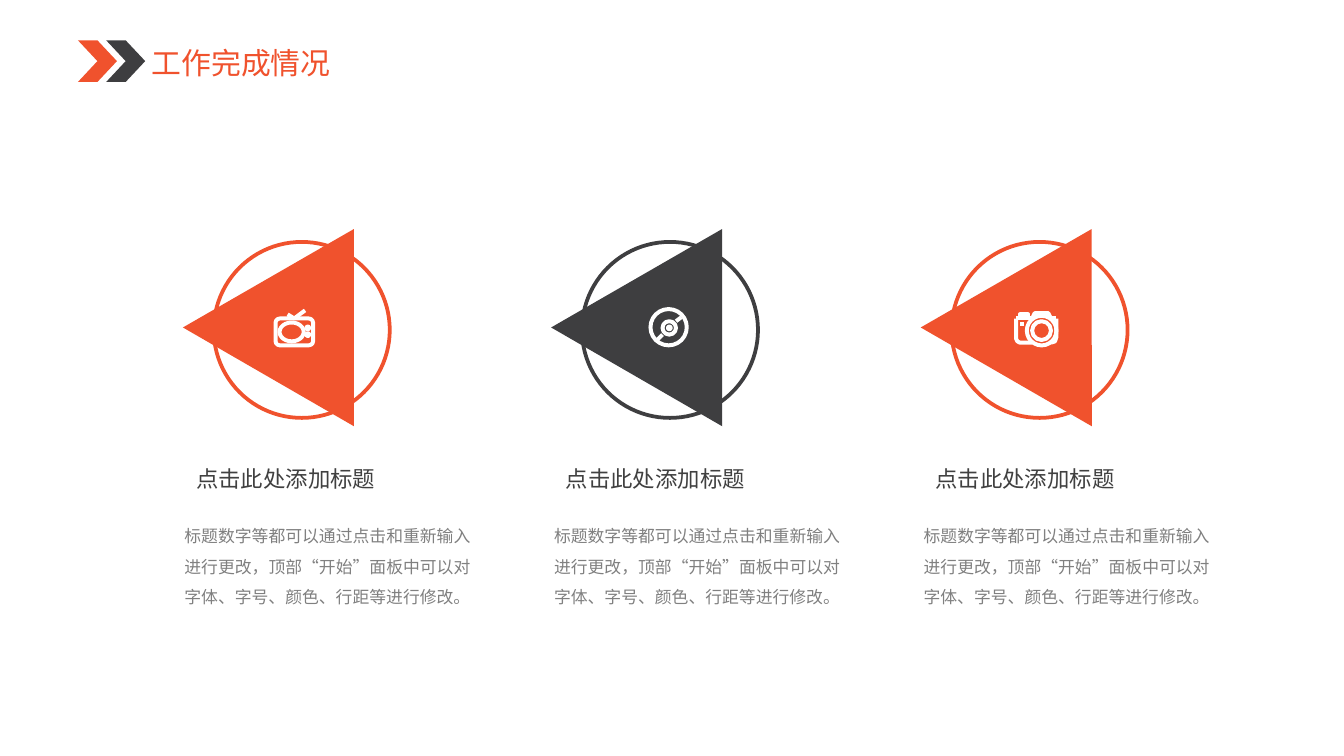
from lxml import etree
from pptx import Presentation
from pptx.dml.color import RGBColor
from pptx.enum.shapes import MSO_CONNECTOR, MSO_SHAPE
from pptx.enum.text import MSO_ANCHOR, MSO_AUTO_SIZE, PP_ALIGN
from pptx.oxml.ns import qn
from pptx.util import Inches, Pt

OVAL = MSO_SHAPE.OVAL
TRIANGLE = MSO_SHAPE.ISOSCELES_TRIANGLE
CHEVRON = MSO_SHAPE.CHEVRON
ROUNDED = MSO_SHAPE.ROUNDED_RECTANGLE
STRAIGHT = MSO_CONNECTOR.STRAIGHT
LEFT, CENTER = PP_ALIGN.LEFT, PP_ALIGN.CENTER
TOP = MSO_ANCHOR.TOP
FIT_SHAPE = MSO_AUTO_SIZE.SHAPE_TO_FIT_TEXT

FONT = "Noto Sans CJK SC"
ORANGE, DARK, WHITE = "F0522D", "3E3E40", "FFFFFF"
HEADING_COLOR, BODY_COLOR = "404040", "808080"
TEXT_PITCH = 2.75
ICON_WEIGHT = 2.13
HEADING = "点击此处添加标题"
BODY = "标题数字等都可以通过点击和重新输入进行更改，顶部“开始”面板中可以对字体、字号、颜色、行距等进行修改。"


def rgb(value):
    return RGBColor.from_string(value)


class SlideBuilder:
    def __init__(self, prs):
        self.slide = prs.slides.add_slide(prs.slide_layouts[5])
        self.shapes = self.slide.shapes

    def format_text(self, sp, text, size, color, wrap=False, align=LEFT, spacing=1.0, inset=0.07):
        tf = sp.text_frame
        tf.word_wrap = wrap
        tf.auto_size = FIT_SHAPE
        tf.vertical_anchor = TOP
        tf.margin_left = tf.margin_right = Inches(inset)
        tf.margin_top = tf.margin_bottom = Inches(0.04)
        p = tf.paragraphs[0]
        p.text = text
        p.alignment = align
        p.line_spacing = spacing
        p.font.size = Pt(size)
        p.font.name = FONT
        p.font.color.rgb = rgb(color)
        props = p._p.pPr.find(qn("a:defRPr"))
        etree.SubElement(props, qn("a:ea")).set("typeface", FONT)

    def title(self, text, x, y, w, h):
        sp = self.shapes.title
        sp.left, sp.top, sp.width, sp.height = map(Inches, (x, y, w, h))
        self.format_text(sp, text, 16, ORANGE, inset=0.08)

    def text(self, text, x, y, w, h, size, color, **options):
        sp = self.shapes.add_textbox(*map(Inches, (x, y, w, h)))
        self.format_text(sp, text, size, color, **options)

    def solid(self, kind, x, y, w, h, color, rotation=0):
        sp = self.shapes.add_shape(kind, *map(Inches, (x, y, w, h)))
        sp.shadow.inherit = False
        sp.fill.solid()
        sp.fill.fore_color.rgb = rgb(color)
        sp.line.fill.background()
        sp.rotation = rotation

    def stroke(self, sp, color, weight):
        sp.shadow.inherit = False
        sp.fill.background()
        sp.line.color.rgb = rgb(color)
        sp.line.width = Pt(weight)

    def outline(self, shapes, kind, x, y, w, h, color=WHITE, weight=ICON_WEIGHT):
        sp = shapes.add_shape(kind, *map(Inches, (x, y, w, h)))
        self.stroke(sp, color, weight)
        return sp

    def polyline(self, shapes, *points):
        start, *rest = [(Inches(x), Inches(y)) for x, y in points]
        builder = shapes.build_freeform(*start)
        builder.add_line_segments(rest, close=False)
        self.stroke(builder.convert_to_shape(), WHITE, ICON_WEIGHT)

    def line(self, shapes, x1, y1, x2, y2):
        cx = shapes.add_connector(STRAIGHT, *map(Inches, (x1, y1, x2, y2)))
        cx.line.color.rgb = rgb(WHITE)
        cx.line.width = Pt(ICON_WEIGHT)
        etree.SubElement(cx._element.spPr, qn("a:effectLst"))

    def television(self):
        shapes = self.shapes.add_group_shape().shapes
        body = self.outline(shapes, ROUNDED, 2.05, 2.37, 0.28, 0.2)
        body.adjustments[0] = 0.16
        self.polyline(shapes, (2.14, 2.34), (2.19, 2.37), (2.27, 2.31))
        self.outline(shapes, OVAL, 2.08, 2.4, 0.18, 0.14)
        for y in (2.43, 2.48):
            self.outline(shapes, OVAL, 2.28, y, 0.02, 0.02)

    def disc(self):
        shapes = self.shapes.add_group_shape().shapes
        for x, y, size in ((4.97, 2.43, 0.02), (4.84, 2.3, 0.27), (4.93, 2.39, 0.1)):
            self.outline(shapes, OVAL, x, y, size, size)
        self.line(shapes, 5.03, 2.39, 5.07, 2.36)
        self.line(shapes, 4.89, 2.53, 4.93, 2.49)

    def camera(self):
        shapes = self.shapes.add_group_shape().shapes
        for x, y, size in ((7.64, 2.35, 0.22), (7.68, 2.39, 0.14)):
            self.outline(shapes, OVAL, x, y, size, size)
        self.polyline(shapes, (7.56, 2.37), (7.56, 2.52), (7.57, 2.54), (7.59, 2.55), (7.68, 2.55))
        self.polyline(shapes, (7.82, 2.55), (7.85, 2.54), (7.86, 2.51), (7.86, 2.37))
        self.polyline(shapes, (7.59, 2.37), (7.59, 2.34), (7.65, 2.34), (7.65, 2.37))
        self.polyline(shapes, (7.82, 2.37), (7.8, 2.33), (7.7, 2.33), (7.68, 2.37))
        for x1, x2, y in ((7.56, 7.68, 2.37), (7.82, 7.86, 2.37), (7.59, 7.62, 2.41)):
            self.line(shapes, x1, y, x2, y)

    def badge(self, x, color, draw_icon):
        self.outline(self.shapes, OVAL, x, 1.8, 1.31, 1.31, color, 2)
        self.solid(TRIANGLE, x - 0.01, 1.62, 1.47, 1.27, color, 30)
        draw_icon()

    def caption(self, offset):
        self.text(HEADING, 1.39 + offset, 3.42, 1.5, 0.28, 12, HEADING_COLOR)
        self.text(BODY, 1.25 + offset, 3.8, 2.37, 0.76, 9, BODY_COLOR,
                  wrap=True, align=CENTER, spacing=1.5)


def main():
    prs = Presentation()
    prs.slide_width = Inches(10)
    prs.slide_height = prs.slide_width * 9 // 16
    s = SlideBuilder(prs)
    s.title("工作完成情况", 1.05, 0.29, 1.5, 0.35)
    for x, color in ((0.58, ORANGE), (0.79, DARK)):
        s.solid(CHEVRON, x, 0.3, 0.29, 0.31, color)
    badges = ((1.59, ORANGE, s.television), (4.33, DARK, s.disc), (7.08, ORANGE, s.camera))
    for i, (x, color, draw_icon) in enumerate(badges):
        s.badge(x, color, draw_icon)
        s.caption(i * TEXT_PITCH)
    prs.save("out.pptx")


if __name__ == "__main__":
    main()
